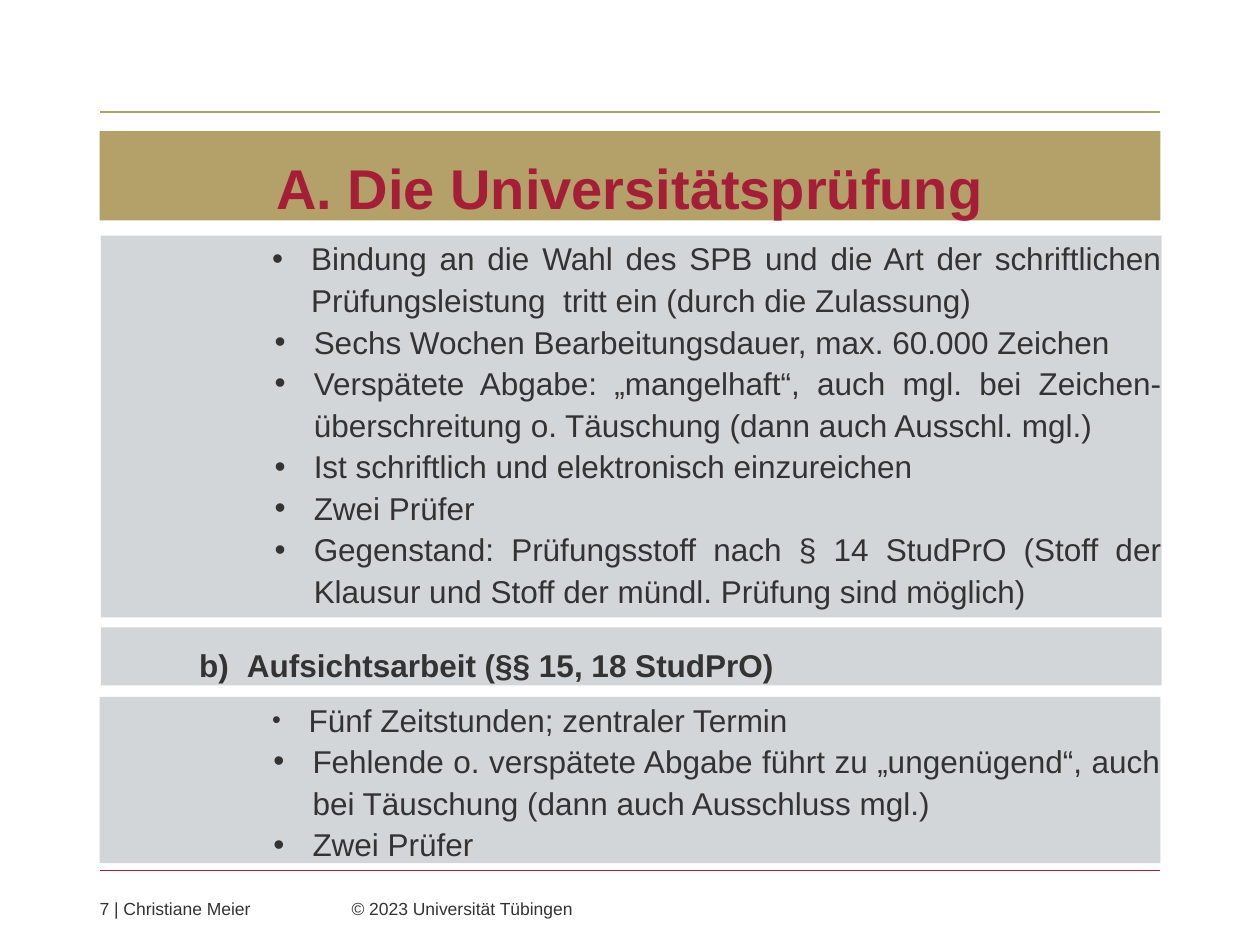
from dataclasses import dataclass

from lxml.etree import SubElement
from pptx import Presentation
from pptx.dml.color import RGBColor
from pptx.enum.shapes import MSO_CONNECTOR as Connector
from pptx.enum.text import MSO_ANCHOR as Anchor, MSO_AUTO_SIZE as AutoSize, PP_ALIGN as Align
from pptx.oxml.ns import qn
from pptx.util import Inches, Pt

COLORS = {"gold": "B4A069", "red": "A51E37", "gray": "D3D6D8", "text": "333333"}
LEFT, WIDTH = 0.79, 8.42


@dataclass
class Item:
    text: str
    margin: float = 1.69
    hanging: float = 0.31
    level: int = 2
    bullet_size: int = 100


@dataclass
class Rule:
    top: float
    color: str


RULES = [Rule(0.89, "gold"), Rule(6.91, "red")]

THESIS = [
    Item("Bindung an die Wahl des SPB und die Art der schriftlichen "
         "Prüfungsleistung  tritt ein (durch die Zulassung)", margin=1.67, level=0),
    Item("Sechs Wochen Bearbeitungsdauer, max. 60.000 Zeichen"),
    Item("Verspätete Abgabe: „mangelhaft“, auch mgl. bei Zeichen-überschreitung "
         "o. Täuschung (dann auch Ausschl. mgl.)"),
    Item("Ist schriftlich und elektronisch einzureichen"),
    Item("Zwei Prüfer"),
    Item("Gegenstand: Prüfungsstoff nach § 14 StudPrO (Stoff der Klausur und "
         "Stoff der mündl. Prüfung sind möglich)"),
]
EXAM = [
    Item("Fünf Zeitstunden; zentraler Termin", margin=1.66, hanging=0.29, level=1, bullet_size=80),
    Item("Fehlende o. verspätete Abgabe führt zu „ungenügend“, auch bei "
         "Täuschung (dann auch Ausschluss mgl.)"),
    Item("Zwei Prüfer"),
]


def rgb(name: str) -> RGBColor:
    return RGBColor.from_string(COLORS[name])


def prepare(box, left: float, top: float, height: float, *, fill=None, anchor=Anchor.TOP):
    box.left, box.top = Inches(left), Inches(top)
    box.width, box.height = Inches(WIDTH), Inches(height)
    if fill:
        box.fill.solid()
        box.fill.fore_color.rgb = rgb(fill)
    frame = box.text_frame
    frame.word_wrap, frame.auto_size = True, AutoSize.NONE
    frame.vertical_anchor = anchor
    frame.margin_left = frame.margin_right = frame.margin_top = frame.margin_bottom = 0
    return frame


def write(para, text: str, *, size=18, color="text", bold=False, align=Align.LEFT, spacing=1.0):
    para.alignment, para.line_spacing = align, spacing
    para.space_before = para.space_after = Pt(0)
    span = para.add_run()
    span.text = text
    font = span.font
    font.name, font.size, font.bold = "Arial", Pt(size), bold
    font.color.rgb = rgb(color)


def set_marker(para, item: Item, tag: str, **attributes: str) -> None:
    para.level = item.level
    props = para._p.get_or_add_pPr()
    props.set("marL", str(Inches(item.margin)))
    props.set("indent", str(-Inches(item.hanging)))
    SubElement(props, qn("a:buSzPct"), val=str(item.bullet_size * 1000))
    SubElement(props, qn("a:buFont"), typeface="Arial")
    SubElement(props, qn(tag), **attributes)


def fill_list(frame, items: list[Item]) -> None:
    for index, item in enumerate(items):
        para = frame.add_paragraph() if index else frame.paragraphs[0]
        set_marker(para, item, "a:buChar", char="•")
        write(para, item.text, align=Align.JUSTIFY, spacing=1.1)


def draw_rule(page, rule: Rule) -> None:
    line = page.shapes.add_connector(Connector.STRAIGHT, Inches(LEFT), Inches(rule.top),
                                     Inches(LEFT + WIDTH), Inches(rule.top))
    line.line.color.rgb = rgb(rule.color)
    line.line.width = Pt(0.75)
    SubElement(line._element.spPr, qn("a:effectLst"))


def main() -> None:
    deck = Presentation()
    deck.slide_width, deck.slide_height = Inches(10), Inches(7.5)
    page = deck.slides.add_slide(deck.slide_layouts[3])
    for rule in RULES:
        draw_rule(page, rule)

    title = prepare(page.shapes.title, LEFT, 1.04, 0.71, fill="gold", anchor=Anchor.BOTTOM)
    write(title.paragraphs[0], "A. Die Universitätsprüfung",
          size=32, color="red", bold=True, align=Align.CENTER, spacing=1.5)

    fill_list(prepare(page.placeholders[1], 0.8, 1.87, 3.03, fill="gray"), THESIS)

    heading_box = page.shapes.add_textbox(0, 0, 0, 0)
    heading = prepare(heading_box, 0.8, 4.98, 0.46, fill="gray").paragraphs[0]
    heading_item = Item("Aufsichtsarbeit (§§ 15, 18 StudPrO)", margin=1.16, hanging=0.38)
    set_marker(heading, heading_item, "a:buAutoNum", type="alphaLcParenR", startAt="2")
    write(heading, heading_item.text, bold=True, spacing=1.5)

    fill_list(prepare(page.placeholders[2], LEFT, 5.53, 1.32, fill="gray"), EXAM)

    footer = prepare(page.shapes.add_textbox(0, 0, 0, 0), LEFT, 7.13, 0.17).paragraphs[0]
    tabs = SubElement(footer._p.get_or_add_pPr(), qn("a:tabLst"))
    SubElement(tabs, qn("a:tab"), pos=str(Inches(2)), algn="l")
    write(footer, "7 | Christiane Meier\t© 2023 Universität Tübingen", size=10)

    deck.save("out.pptx")


if __name__ == "__main__":
    main()
